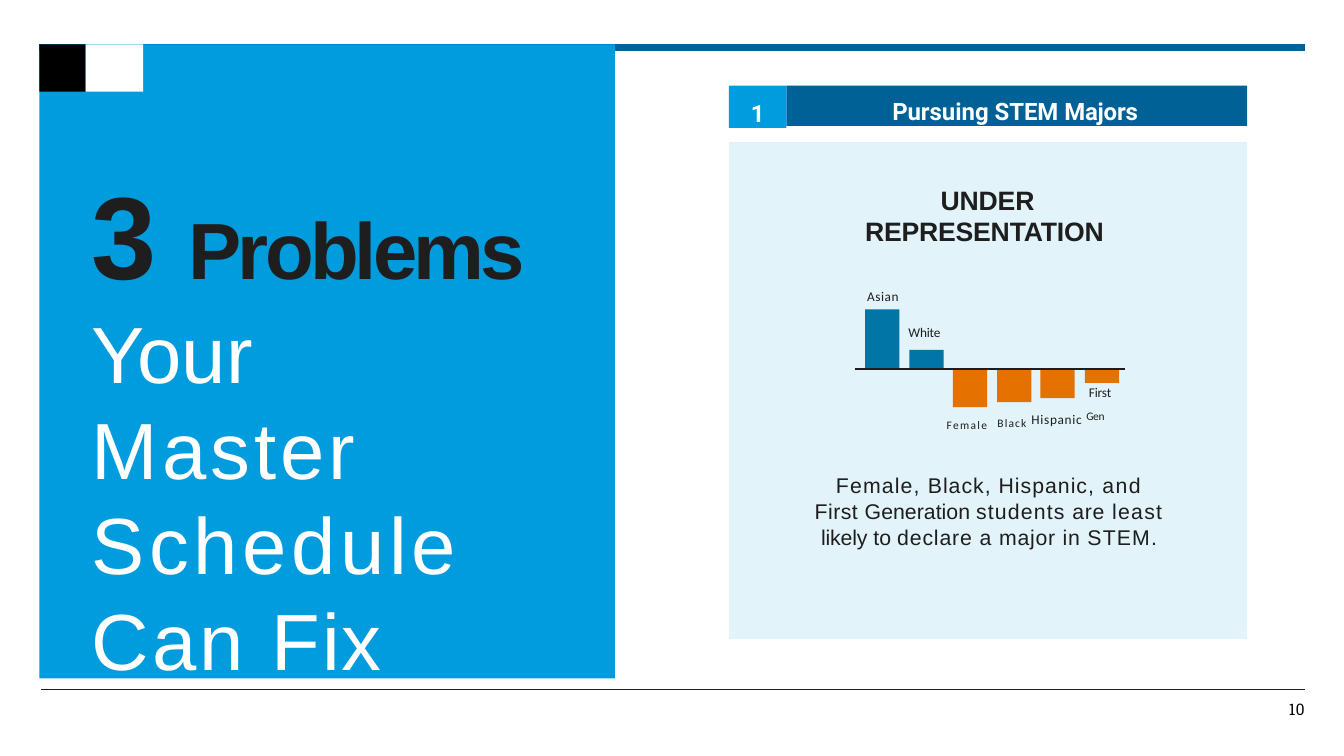
from dataclasses import dataclass
from typing import Optional

from lxml import etree
from pptx import Presentation
from pptx.dml.color import RGBColor
from pptx.enum.shapes import MSO_CONNECTOR, MSO_SHAPE
from pptx.enum.text import MSO_ANCHOR, PP_ALIGN
from pptx.oxml.ns import qn
from pptx.util import Emu, Pt

PX = 9144  # 100 px to the inch
INK, WHITE, BLACK = "1E1E1E", "FFFFFF", "000000"
SKY, NAVY, PALE = "009CDE", "006197", "E2F3F9"
OVER, UNDER = "0075A6", "E47100"


@dataclass
class Box:
    x: int
    y: int
    w: int
    h: int


@dataclass
class Run:
    text: str
    spacing: float = 0
    size: Optional[float] = None
    baseline: int = 0


@dataclass
class Para:
    runs: list[Run]
    font: str
    size: float
    color: str = INK
    bold: bool = False
    align: PP_ALIGN = PP_ALIGN.LEFT
    margin: int = 0
    indent: int = 0
    before: float = 0


@dataclass
class Rule:
    x1: int
    x2: int
    y: int
    color: str
    width: float


@dataclass
class Bar:
    """Height is positive above the axis, negative below it."""
    height: int
    color: str


def px(n: int) -> Emu:
    return Emu(n * PX)


def rgb(color: str) -> RGBColor:
    return RGBColor.from_string(color)


def place(b: Box) -> tuple[Emu, ...]:
    return px(b.x), px(b.y), px(b.w), px(b.h)


def add_rect(s, box: Box, color: str):
    sp = s.shapes.add_shape(MSO_SHAPE.RECTANGLE, *place(box))
    sp.shadow.inherit = False
    sp.fill.solid()
    sp.fill.fore_color.rgb = rgb(color)
    sp.line.fill.background()
    return sp


def add_rule(s, rule: Rule) -> None:
    c = s.shapes.add_connector(MSO_CONNECTOR.STRAIGHT, px(rule.x1), px(rule.y),
                               px(rule.x2), px(rule.y))
    c.line.color.rgb = rgb(rule.color)
    c.line.width = Pt(rule.width)
    etree.SubElement(c._element.spPr, qn("a:effectLst"))


def write(sp, paras: list[Para], top: int = 1, wrap: bool = True,
          anchor: MSO_ANCHOR = MSO_ANCHOR.TOP) -> None:
    tf = sp.text_frame
    tf.word_wrap = wrap
    tf.vertical_anchor = anchor
    tf.margin_left = tf.margin_right = tf.margin_bottom = 0
    tf.margin_top = px(top)
    for i, para in enumerate(paras):
        p = tf.add_paragraph() if i else tf.paragraphs[0]
        p.alignment = para.align
        if para.before:
            p.space_before = Pt(para.before)
        pPr = p._p.get_or_add_pPr()
        pPr.set("marL", str(px(para.margin)))
        pPr.set("indent", str(px(para.indent)))
        p.font.name = para.font
        p.font.size = Pt(para.size)
        p.font.bold = para.bold
        p.font.color.rgb = rgb(para.color)
        for run in para.runs:
            r = p.add_run()
            r.text = run.text
            if run.size:
                r.font.size = Pt(run.size)
            rPr = r._r.get_or_add_rPr()
            if run.spacing:
                rPr.set("spc", str(round(run.spacing * 100)))
            if run.baseline:
                rPr.set("baseline", str(run.baseline * 1000))


def add_text(s, box: Box, paras: list[Para], top: int = 1, wrap: bool = True,
             anchor: MSO_ANCHOR = MSO_ANCHOR.TOP) -> None:
    write(s.shapes.add_textbox(*place(box)), paras, top, wrap, anchor)


def add_bars(s, bars: list[Bar], left: int, axis: int) -> None:
    for i, bar in enumerate(bars):
        x = left + round(i * 43.6)
        add_rect(s, Box(x, axis - max(bar.height, 0), 34, abs(bar.height)), bar.color)


PAGE_RULES = [Rule(39, 1294, 47, "006298", 5.25), Rule(41, 1294, 684, INK, 0.25)]
BARS = [Bar(59, OVER), Bar(19, OVER), Bar(-38, UNDER), Bar(-33, UNDER),
        Bar(-29, UNDER), Bar(-14, UNDER)]
BAR_LABELS = [
    (Box(859, 285, 36, 17), Run("Asian", 0.4)),
    (Box(900, 321, 36, 17), Run("White", -0.1)),
    (Box(1079, 380, 29, 17), Run("First", -0.1)),
]
LOW_LABELS = [Run("Female", 0.9, 14.2, -28), Run(" ", 4.5, 14.2, -28),
              Run("Black ", 0.8, 14.2, -17), Run("Hispanic ", 0.5),
              Run("Gen", -0.3, 14.2, 17)]
FINDING = [
    Run("Female, ", 0.8), Run("Black, Hispanic, ", 0.7), Run("and ", 1),
    Run("First ", 0.3), Run("Generation "), Run("students", 0.8), Run(" are ", 0.5),
    Run("least ", 0.9), Run("likely ", -0.1), Run("to "), Run("declare ", 0.6),
    Run("a ", 0.6), Run("major in ", 0.5), Run("STEM.", 0.8),
]
TITLE = [
    Para([Run("3 ", -0.5, 83.5), Run("Problems", -2.7)], "Arial", 56.9, bold=True,
         margin=2),
    Para([Run("Your "), Run("Master ", 2.9), Run("Schedule ", 3.3), Run("Can ", 2),
          Run("Fix", 1.6)], "Arial", 56.9, WHITE, margin=2, before=1),
]


def add_problem_card(s) -> None:
    add_rect(s, Box(723, 141, 514, 493), PALE)
    write(add_rect(s, Box(780, 85, 457, 40), NAVY),
          [Para([Run("Pursuing STEM "), Run("Majors", -0.1)], "Roboto", 17.1, WHITE,
                True, margin=105)], top=11)
    write(add_rect(s, Box(723, 85, 57, 42), SKY),
          [Para([Run("1", -0.1)], "Roboto", 17.1, WHITE, True, PP_ALIGN.CENTER)], top=13)
    add_text(s, Box(857, 181, 245, 65),
             [Para([Run("UNDER REPRESENTATION", -0.1)], "Arial", 19, bold=True,
                   margin=1, indent=75)])
    add_bars(s, BARS, left=858, axis=366)
    add_rule(s, Rule(848, 1116, 366, "1D1D1D", 1.5))
    for box, run in BAR_LABELS:
        add_text(s, box, [Para([run], "Calibri", 9.5, margin=1)])
    add_text(s, Box(935, 400, 174, 17), [Para(LOW_LABELS, "Calibri", 9.5, margin=4)])
    add_text(s, Box(806, 468, 349, 78),
             [Para(FINDING, "Arial", 15.2, align=PP_ALIGN.CENTER, margin=1)])


def add_title_panel(s) -> None:
    add_rect(s, Box(39, 44, 571, 629), SKY)
    add_rect(s, Box(39, 44, 46, 47), BLACK)
    add_rect(s, Box(85, 44, 57, 47), WHITE)
    add_text(s, Box(89, 160, 448, 431), TITLE)


def main() -> None:
    prs = Presentation()
    prs.slide_width, prs.slide_height = px(1333), px(750)
    s = prs.slides.add_slide(prs.slide_layouts[6])
    for rule in PAGE_RULES:
        add_rule(s, rule)
    add_text(s, Box(1243, 696, 51, 16),
             [Para([Run("10")], "Roboto Slab", 11.4, "080808", align=PP_ALIGN.RIGHT)],
             top=0, wrap=False, anchor=MSO_ANCHOR.MIDDLE)
    add_problem_card(s)
    add_title_panel(s)
    prs.save("out.pptx")


if __name__ == "__main__":
    main()
